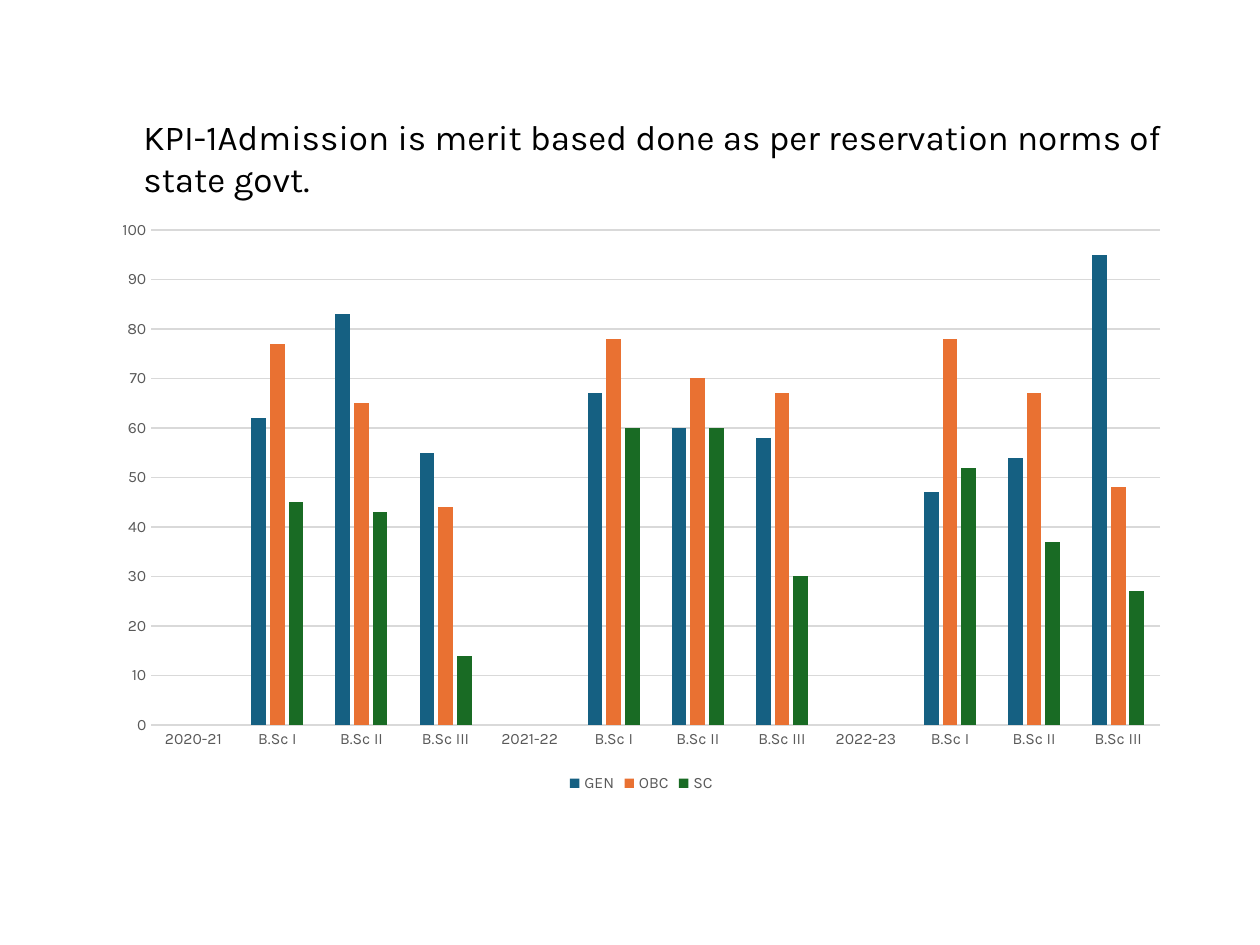
"""Build the admissions slide: a heading over a clustered column chart."""
from pptx import Presentation
from pptx import util as u
from pptx.chart.data import CategoryChartData
from pptx.dml.color import RGBColor
from pptx.enum import chart as ch, text

BLACK = RGBColor(0x00, 0x00, 0x00)
GREY = RGBColor(0x59, 0x59, 0x59)
RULE = RGBColor(0xD9, 0xD9, 0xD9)
BLUE = RGBColor(0x15, 0x60, 0x82)
ORANGE = RGBColor(0xE9, 0x71, 0x32)
GREEN = RGBColor(0x19, 0x6B, 0x24)
FONT = "Karla"

deck = Presentation()
deck.slide_width, deck.slide_height = u.Inches(10), u.Inches(7.5)
slide = deck.slides.add_slide(deck.slide_layouts[6])

years = ["2020-21", "2021-22", "2022-23"]
classes = ["B.Sc I", "B.Sc II", "B.Sc III"]
admissions = {
    "GEN": (BLUE, [(62, 83, 55), (67, 60, 58), (47, 54, 95)]),
    "OBC": (ORANGE, [(77, 65, 44), (78, 70, 67), (78, 67, 48)]),
    "SC": (GREEN, [(45, 43, 14), (60, 60, 30), (52, 37, 27)]),
}
data = CategoryChartData()
data.categories = [label for year in years for label in [year, *classes]]
for group, (_, by_year) in admissions.items():
    data.add_series(group, [n for counts in by_year for n in (None, *counts)])

chart = slide.shapes.add_chart(
    ch.XL_CHART_TYPE.COLUMN_CLUSTERED,
    u.Inches(0.8), u.Inches(1.66), u.Inches(8.58), u.Inches(4.67), data).chart
chart.has_title = False
chart.font.name, chart.font.size = FONT, u.Pt(10)
chart.font.color.rgb = BLACK
chart.has_legend = True
chart.legend.position = ch.XL_LEGEND_POSITION.BOTTOM
chart.legend.include_in_layout = False

years_axis, count_axis = chart.category_axis, chart.value_axis
for axis in (years_axis, count_axis):
    axis.major_tick_mark = axis.minor_tick_mark = ch.XL_TICK_MARK.NONE
for font in (years_axis.tick_labels.font, count_axis.tick_labels.font, chart.legend.font):
    font.name, font.size = FONT, u.Pt(9)
    font.color.rgb = GREY
count_axis.minimum_scale, count_axis.maximum_scale = 0, 100
count_axis.major_unit = 10
count_axis.has_major_gridlines = True
count_axis.format.line.fill.background()
for line in (years_axis.format.line, count_axis.major_gridlines.format.line):
    line.color.rgb = RULE
    line.width = u.Pt(0.75)

columns = chart.plots[0]
columns.gap_width, columns.overlap = 219, -27
columns.vary_by_categories = False
for series in columns.series:
    series.format.fill.solid()
    series.format.fill.fore_color.rgb = admissions[series.name][0]
    series.invert_if_negative = False

heading = slide.shapes.add_textbox(
    u.Inches(1.04), u.Inches(0.87), u.Inches(8.53), u.Inches(0.44)).text_frame
heading.word_wrap = True
heading.auto_size = text.MSO_AUTO_SIZE.SHAPE_TO_FIT_TEXT
kpi = heading.paragraphs[0]
kpi.text = "KPI-1Admission is merit based done as per reservation norms of state govt."
kpi.font.name, kpi.font.size = FONT, u.Pt(20)
kpi.font.color.rgb = BLACK

deck.save("out.pptx")
